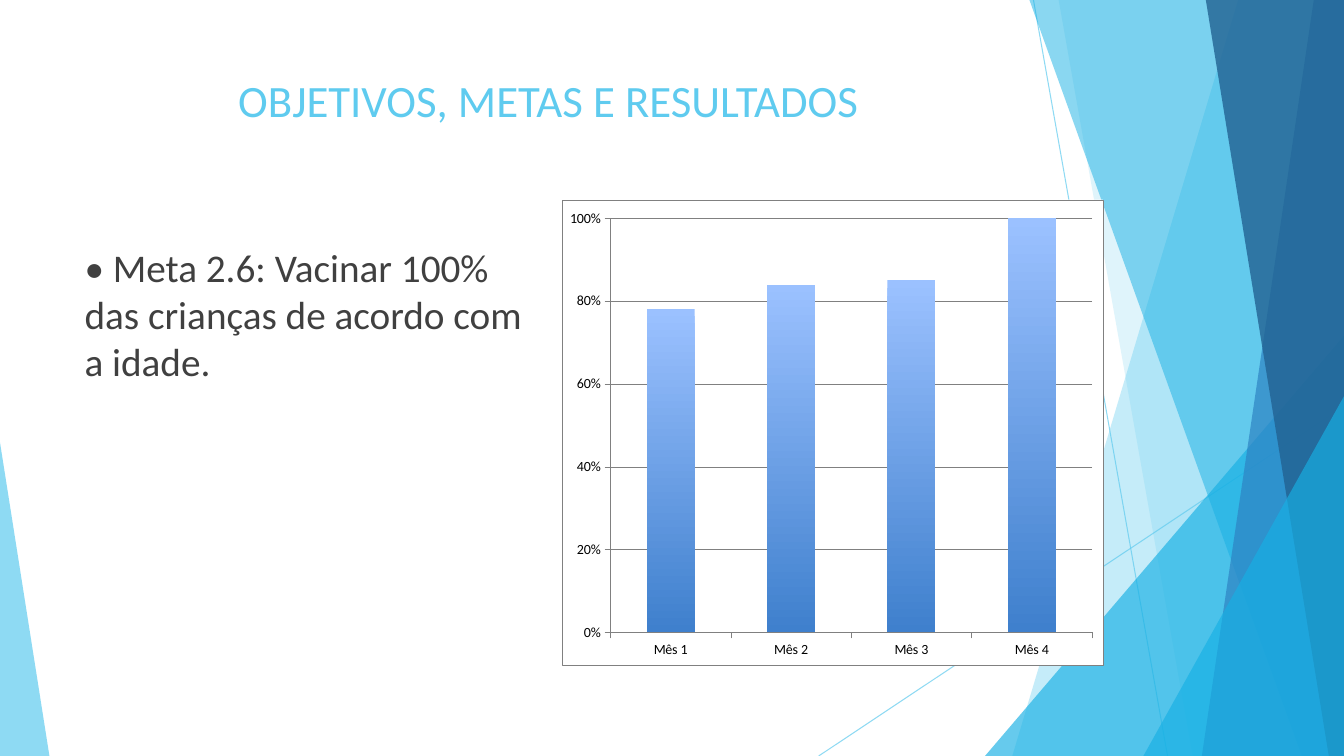
from lxml.etree import SubElement
from pptx import Presentation
from pptx.chart.data import CategoryChartData
from pptx.dml.color import RGBColor
from pptx.enum.chart import XL_CHART_TYPE, XL_TICK_MARK
from pptx.enum.shapes import MSO_CONNECTOR, MSO_SHAPE
from pptx.enum.text import MSO_ANCHOR, PP_ALIGN
from pptx.oxml import parse_xml
from pptx.oxml.ns import nsdecls, qn
from pptx.util import Inches, Pt

SKY, CYAN, BLUE, NAVY = "5FCBEF", "17B0E4", "2E83C3", "226292"
GRAY, DARK, WHITE, BLACK = "808080", "404040", "FFFFFF", "000000"
WIDTH, HEIGHT = 13.33, 7.5


def color(value):
    return RGBColor.from_string(value)


def apply_format(target, values):
    for name, value in values.items():
        setattr(target, name, value)


def set_alpha(fill_parent, percent):
    rgb = next(fill_parent.iter(qn("a:srgbClr")))
    SubElement(rgb, qn("a:alpha"), val=str(percent * 1000))


class SlideBuilder:
    font_name = "Calibri"

    def __init__(self, slide):
        self.slide = slide
        self.shapes = slide.shapes

    def style_font(self, font, size, font_color):
        apply_format(font, {"name": self.font_name, "size": Pt(size), "bold": False})
        font.color.rgb = color(font_color)

    def style_line(self, line, line_color, width):
        line.color.rgb = color(line_color)
        line.width = Pt(width)

    def style_glass(self, shape, fill_color, alpha):
        shape.shadow.inherit = False
        shape.fill.solid()
        shape.fill.fore_color.rgb = color(fill_color)
        set_alpha(shape.element.spPr, alpha)
        shape.line.fill.background()

    def ray(self, start, end):
        points = [Inches(value) for value in (*start, *end)]
        connector = self.shapes.add_connector(MSO_CONNECTOR.STRAIGHT, *points)
        self.style_line(connector.line, SKY, 0.75)
        properties = connector.element.spPr
        set_alpha(properties, 70)
        SubElement(properties, qn("a:effectLst"))

    def band(self, top_x, bottom_x, fill_color, alpha):
        corners = [(top_x, 0), (WIDTH, 0), (WIDTH, HEIGHT), (bottom_x, HEIGHT)]
        points = [(Inches(x), Inches(y)) for x, y in corners]
        builder = self.shapes.build_freeform(*points[0])
        builder.add_line_segments(points[1:], close=True)
        self.style_glass(builder.convert_to_shape(), fill_color, alpha)

    def triangle(self, left, top, width, apex, fill_color, alpha):
        box = [Inches(value) for value in (left, top, width, HEIGHT - top)]
        shape = self.shapes.add_shape(MSO_SHAPE.ISOSCELES_TRIANGLE, *box)
        shape.adjustments[0] = apex
        self.style_glass(shape, fill_color, alpha)

    def fill_text(self, shape, text, size, font_color, paragraph_format):
        frame = shape.text_frame
        apply_format(frame, {"word_wrap": True, "vertical_anchor": MSO_ANCHOR.TOP})
        paragraph = frame.paragraphs[0]
        apply_format(paragraph, paragraph_format)
        run = paragraph.add_run()
        run.text = text
        self.style_font(run.font, size, font_color)

    def title(self, text, left, top, width, height):
        shape = self.shapes.title
        apply_format(shape, {"left": Inches(left), "top": Inches(top),
                             "width": Inches(width), "height": Inches(height)})
        shape.element.getparent().append(shape.element)
        self.fill_text(shape, text, 32, SKY, {"alignment": PP_ALIGN.CENTER})

    def body(self, text, *box):
        shape = self.shapes.add_textbox(*[Inches(value) for value in box])
        self.fill_text(shape, text, 28, DARK,
                       {"alignment": PP_ALIGN.LEFT, "space_before": Pt(10)})

    def column_chart(self, categories, values, *box):
        data = CategoryChartData(number_format="0%")
        data.categories = categories
        data.add_series("Series 1", values)
        chart = self.shapes.add_chart(XL_CHART_TYPE.COLUMN_CLUSTERED,
                                      *[Inches(value) for value in box], data).chart
        apply_format(chart, {"has_legend": False, "has_title": False})
        self.style_font(chart.font, 10, BLACK)
        plot = chart.plots[0]
        apply_format(plot, {"gap_width": 150, "vary_by_categories": False})

        fill = plot.series[0].format.fill
        fill.gradient()
        fill.gradient_angle = 270
        for stop, stop_color in zip(fill.gradient_stops, ("9BC1FF", "3F80CD")):
            stop.color.rgb = color(stop_color)

        value_axis = chart.value_axis
        apply_format(value_axis, {"minimum_scale": 0, "maximum_scale": 1,
                                  "major_unit": 0.2, "has_major_gridlines": True})
        apply_format(value_axis.tick_labels,
                     {"number_format": "0%", "number_format_is_linked": False})
        self.style_line(value_axis.major_gridlines.format.line, GRAY, 0.25)
        for axis in (chart.category_axis, value_axis):
            axis.major_tick_mark = XL_TICK_MARK.OUTSIDE
            self.style_font(axis.tick_labels.font, 10, BLACK)
            self.style_line(axis.format.line, GRAY, 0.25)
        self.frame_chart(chart)

    def frame_chart(self, chart):
        chart_element = chart.element.find(qn("c:chart"))
        chart_element.addnext(parse_xml(
            f'<c:spPr {nsdecls("c", "a")}>'
            f'<a:solidFill><a:srgbClr val="{WHITE}"/></a:solidFill>'
            f'<a:ln w="{Pt(0.25)}"><a:solidFill><a:srgbClr val="{GRAY}"/>'
            '</a:solidFill></a:ln></c:spPr>'))
        plot_area = chart_element.find(qn("c:plotArea"))
        for layout in plot_area.findall(qn("c:layout")):
            plot_area.remove(layout)
        sizes = {"x": 0.09, "y": 0.04, "w": 0.89, "h": 0.89}
        settings = [("layoutTarget", "inner"), ("xMode", "edge"), ("yMode", "edge")]
        settings += sizes.items()
        content = "".join(f'<c:{name} val="{value}"/>' for name, value in settings)
        plot_area.insert(0, parse_xml(
            f'<c:layout {nsdecls("c")}><c:manualLayout>{content}'
            '</c:manualLayout></c:layout>'))


def main():
    presentation = Presentation()
    presentation.slide_width = Inches(WIDTH)
    presentation.slide_height = Inches(HEIGHT)
    slide = presentation.slides.add_slide(presentation.slide_layouts[5])
    builder = SlideBuilder(slide)

    builder.ray((10.25, 0), (11.58, HEIGHT))
    builder.ray((WIDTH, 4.03), (8.12, HEIGHT))
    builder.band(12.28, 10.04, SKY, 36)
    builder.band(10.5, 11.83, SKY, 20)
    builder.triangle(9.77, 3.33, 3.56, 1, CYAN, 66)
    builder.band(10.21, 12.91, CYAN, 50)
    builder.band(13.03, 11.92, BLUE, 70)
    builder.band(11.96, 13.18, NAVY, 80)
    builder.triangle(11.34, 3.93, 1.99, 1, CYAN, 66)
    builder.triangle(0, 4.39, 0.49, 0, SKY, 70)

    builder.title("OBJETIVOS, METAS E RESULTADOS", 0.74, 0.67, 9.4, 1.44)
    builder.body("• Meta 2.6: Vacinar 100% das crianças de acordo com a idade.",
                 0.74, 2.36, 4.58, 4.24)
    builder.column_chart([f"Mês {month}" for month in range(1, 5)],
                         (0.78, 0.84, 0.85, 1), 5.57, 1.98, 5.37, 4.62)
    presentation.save("out.pptx")


if __name__ == "__main__":
    main()
